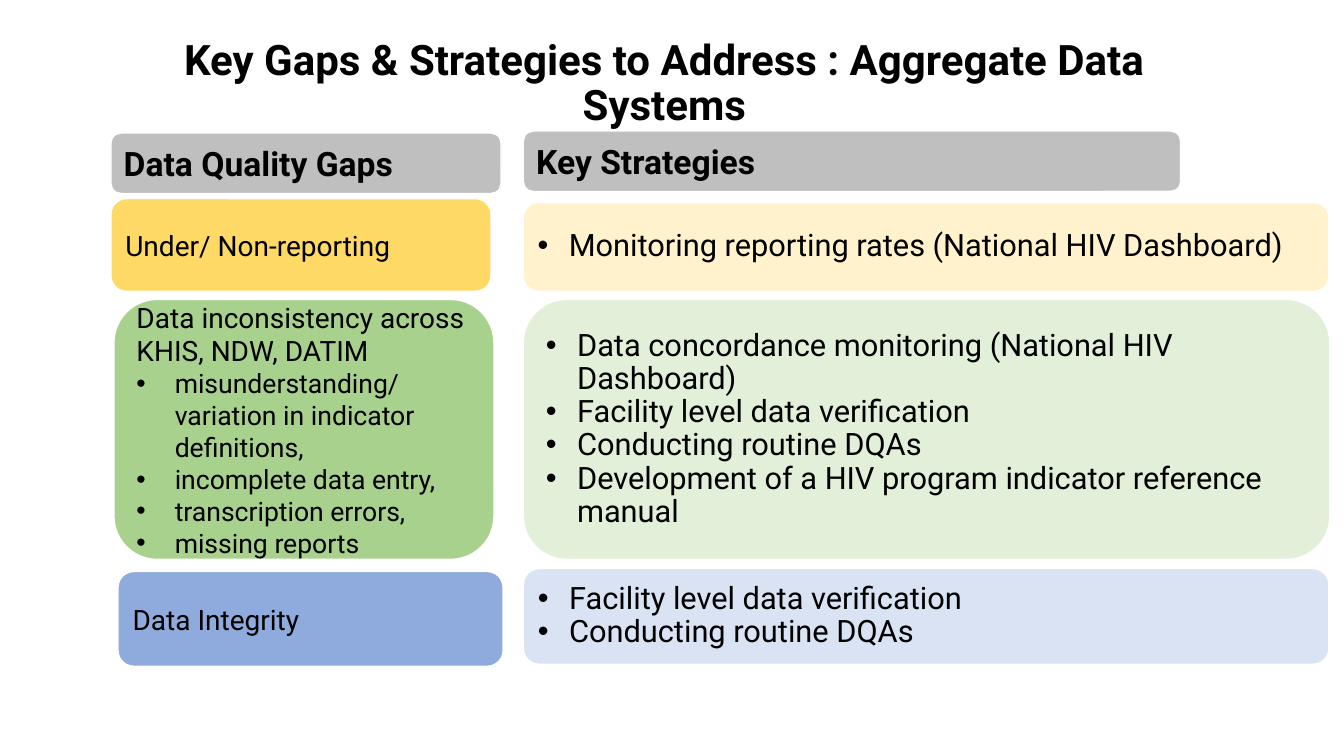
import pptx
import pptx.util
import pptx.dml.color
import pptx.enum.shapes
import pptx.enum.text
import pptx.oxml
import pptx.oxml.ns
from pptx.util import Inches

ALIGN = pptx.enum.text.PP_ALIGN
ANCHOR = pptx.enum.text.MSO_ANCHOR


def color(value):
    return pptx.dml.color.RGBColor.from_string(value)


def write(frame, text, size=20, bold=False, align=ALIGN.LEFT, spacing=1.0, indent=0):
    paragraph = frame.paragraphs[0] if not frame.text else frame.add_paragraph()
    if indent:
        properties = paragraph._p.get_or_add_pPr()
        properties.set("marL", str(Inches(indent)))
        properties.set("indent", str(-Inches(indent)))
        namespace = pptx.oxml.ns.nsdecls("a")
        for element in (
            f'<a:buClr {namespace}><a:srgbClr val="000000"/></a:buClr>',
            f'<a:buFont {namespace} typeface="Arial"/>',
            f'<a:buChar {namespace} char="•"/>',
        ):
            properties.append(pptx.oxml.parse_xml(element))
    paragraph.alignment = align
    paragraph.line_spacing = spacing
    paragraph.space_before = pptx.util.Pt(0)
    run = paragraph.add_run()
    run.text = text
    run.font.name = "Roboto"
    run.font.size = pptx.util.Pt(size)
    run.font.bold = bold
    run.font.color.rgb = color("000000")


deck = pptx.Presentation()
deck.slide_width = Inches(13.33)
deck.slide_height = Inches(7.5)
slide = deck.slides.add_slide(deck.slide_layouts[5])

title = slide.shapes.title
title.left, title.top = Inches(1.22), Inches(0.23)
title.width, title.height = Inches(10.74), Inches(0.73)
title.text_frame.word_wrap = True
title.text_frame.auto_size = pptx.enum.text.MSO_AUTO_SIZE.NONE
title.text_frame.vertical_anchor = ANCHOR.TOP
title.text_frame.margin_top = Inches(0.16)
write(title.text_frame, "Key Gaps & Strategies to Address : Aggregate Data Systems",
      size=30, bold=True, align=ALIGN.CENTER, spacing=0.9)

heading = {"size": 24, "bold": True}
gap = {"size": 20}
cause = {"size": 19, "indent": 0.38}
strategy = {"size": 22, "spacing": 0.9, "indent": 0.31}

cards = [
    (1.1, 1.97, 3.77, 0.92, "FFD966", [("Under/ Non-reporting", gap)]),
    (5.19, 2.01, 7.99, 0.88, "FFF2CC", [
        ("Monitoring reporting rates (National HIV Dashboard)", strategy),
    ]),
    (1.13, 2.97, 3.77, 2.58, "A9D18E", [
        ("Data inconsistency across KHIS, NDW, DATIM", gap),
        ("misunderstanding/ variation in indicator definitions,", cause),
        ("incomplete data entry,", cause),
        ("transcription errors,", cause),
        ("missing reports", cause),
    ]),
    (1.17, 5.67, 3.82, 0.94, "8FAADC", [("Data Integrity", gap)]),
    (5.19, 2.97, 8, 2.58, "E2F0D9", [
        ("Data concordance monitoring (National HIV Dashboard)", strategy),
        ("Facility level data verification", strategy),
        ("Conducting routine DQAs", strategy),
        ("Development of a HIV program indicator reference manual", strategy),
    ]),
    (5.19, 5.64, 7.99, 0.95, "DAE3F3", [
        ("Facility level data verification", strategy),
        ("Conducting routine DQAs", strategy),
    ]),
    (1.1, 1.32, 3.87, 0.6, "BFBFBF", [("Data Quality Gaps", heading)]),
    (5.19, 1.3, 6.52, 0.6, "BFBFBF", [("Key Strategies", heading)]),
]

for left, top, width, height, fill, lines in cards:
    card = slide.shapes.add_shape(
        pptx.enum.shapes.MSO_SHAPE.ROUNDED_RECTANGLE,
        Inches(left), Inches(top), Inches(width), Inches(height))
    card.shadow.inherit = False
    card.fill.solid()
    card.fill.fore_color.rgb = color(fill)
    card.line.color.rgb = color("FFFFFF")
    card.line.width = pptx.util.Pt(1)
    frame = card.text_frame
    frame.word_wrap = True
    frame.vertical_anchor = ANCHOR.MIDDLE
    frame.margin_left = frame.margin_right = Inches(0.1)
    frame.margin_top = frame.margin_bottom = Inches(0.1)
    for text, style in lines:
        write(frame, text, **style)

deck.save("out.pptx")
